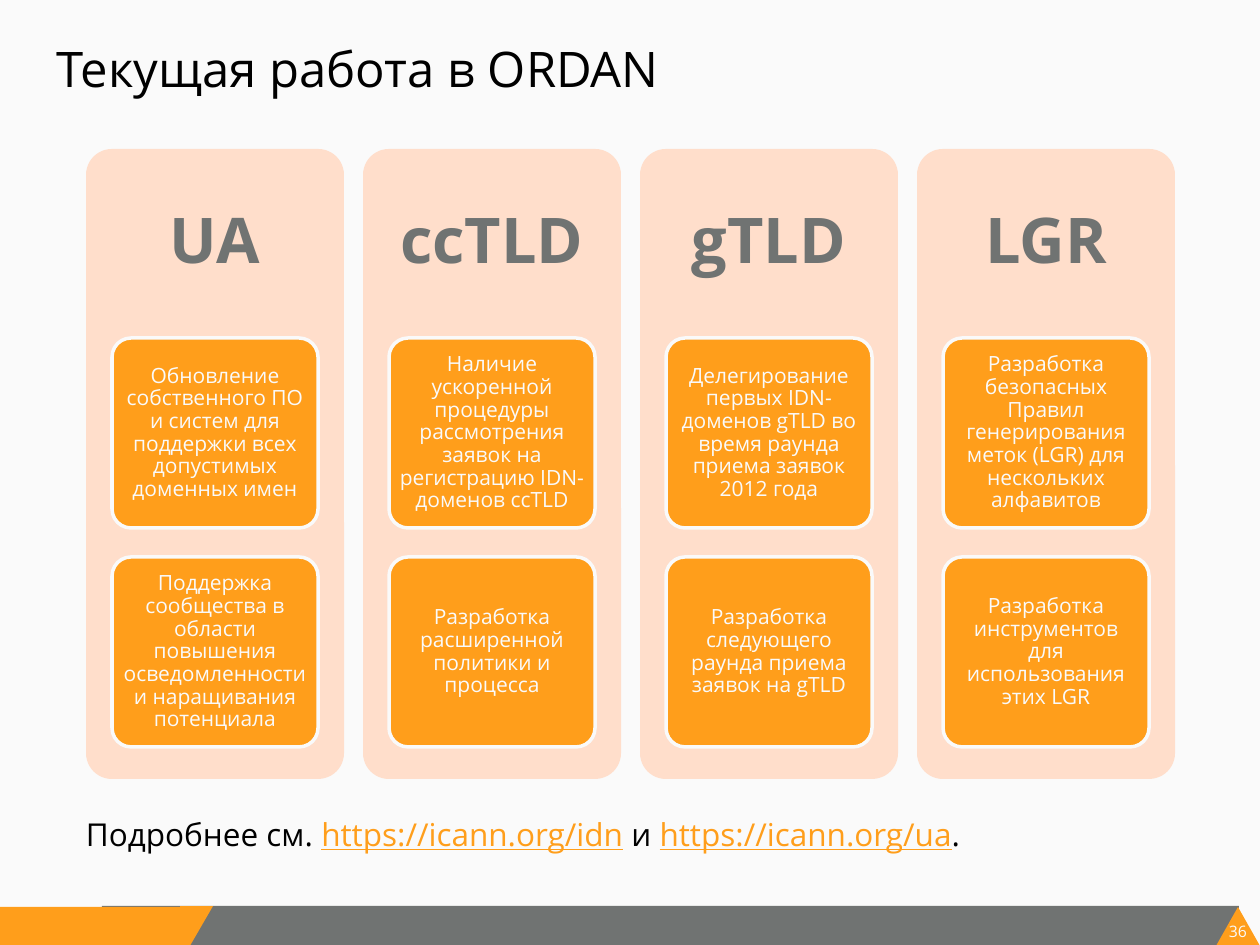
import pptx
import pptx.util
import pptx.dml.color
import pptx.enum.shapes
import pptx.enum.text

PX = 914400 / 126
FONT = "Open Sans"
PAPER, BLACK, GREY, ORANGE, PEACH = "FAFAFA", "000000", "707372", "FF9E1B", "FFDECB"
SHAPE = pptx.enum.shapes.MSO_SHAPE
ALIGN = pptx.enum.text.PP_ALIGN
ANCHOR = pptx.enum.text.MSO_ANCHOR

TITLE = "Текущая работа в ORDAN"
COLUMNS = [
    ("UA", [
        "Обновление собственного ПО и систем для поддержки всех допустимых доменных имен",
        "Поддержка сообщества в области повышения осведомленности и наращивания потенциала",
    ]),
    ("ccTLD", [
        "Наличие ускоренной процедуры рассмотрения заявок на регистрацию IDN-доменов ccTLD",
        "Разработка расширенной политики и процесса",
    ]),
    ("gTLD", [
        "Делегирование первых IDN-доменов gTLD во время раунда приема заявок 2012 года",
        "Разработка следующего раунда приема заявок на gTLD",
    ]),
    ("LGR", [
        "Разработка безопасных Правил генерирования меток (LGR) для нескольких алфавитов",
        "Разработка инструментов для использования этих LGR",
    ]),
]
MORE = [
    ("Подробнее см. ", BLACK, False),
    ("https://icann.org/idn", ORANGE, True),
    (" и ", BLACK, False),
    ("https://icann.org/ua", ORANGE, True),
    (".", BLACK, False),
]
PAGE_NUMBER = "36"

FOOTER = [
    (SHAPE.RECTANGLE, (102, 906, 1137, 39), GREY),
    (SHAPE.RECTANGLE, (0, 907, 189, 39), ORANGE),
    (SHAPE.ISOSCELES_TRIANGLE, (1216, 907, 44, 39), ORANGE),
    (SHAPE.PARALLELOGRAM, (169, 906, 44, 39), ORANGE),
    (SHAPE.RECTANGLE, (180, 906, 18, 16), ORANGE),
]
COLUMN_LEFT, COLUMN_TOP, COLUMN_WIDTH, COLUMN_HEIGHT, COLUMN_STEP = 86, 149, 258, 630, 277
HEADING_HEIGHT = 189
CARD_INSET, CARD_TOP, CARD_WIDTH, CARD_HEIGHT, CARD_STEP = 26, 338, 206, 190, 219


def px(value):
    return round(value * PX)


def color(code):
    return pptx.dml.color.RGBColor.from_string(code)


def add_block(page, kind, place, fill, line=None):
    block = page.shapes.add_shape(kind, *map(px, place))
    block.shadow.inherit = False
    block.fill.solid()
    block.fill.fore_color.rgb = color(fill)
    if line:
        block.line.color.rgb = color(line)
        block.line.width = pptx.util.Pt(2)
    else:
        block.line.fill.background()
    if kind == SHAPE.ROUNDED_RECTANGLE:
        block.adjustments[0] = 0.1
    return block


def write(box, spans, size, insets, align=ALIGN.LEFT, anchor=ANCHOR.TOP, spacing=None, bold=False):
    frame = box.text_frame
    frame.word_wrap = True
    frame.vertical_anchor = anchor
    frame.margin_left = frame.margin_right = px(insets[0])
    frame.margin_top = frame.margin_bottom = px(insets[1])
    para = frame.paragraphs[0]
    para.alignment = align
    if spacing:
        para.line_spacing = spacing
    for text, ink, underline in spans:
        span = para.add_run()
        span.text = text
        span.font.name = FONT
        span.font.size = pptx.util.Pt(size)
        span.font.bold = bold
        span.font.underline = underline
        span.font.color.rgb = color(ink)


def add_text(page, place, *args, **style):
    write(page.shapes.add_textbox(*map(px, place)), *args, **style)


def main():
    deck = pptx.Presentation()
    deck.slide_width, deck.slide_height = px(1260), px(945)
    page = deck.slides.add_slide(deck.slide_layouts[6])
    page.background.fill.solid()
    page.background.fill.fore_color.rgb = color(PAPER)

    for kind, place, fill in FOOTER:
        block = add_block(page, kind, place, fill)
        if kind == SHAPE.PARALLELOGRAM:
            block.adjustments[0] = 0.58
            block.rotation = 180
    add_text(page, (1227, 922, 22, 19), [(PAGE_NUMBER, PAPER, False)], 9, (0, 0), align=ALIGN.CENTER)
    add_text(page, (44, 32, 1216, 158), [(TITLE, BLACK, False)], 28, (13, 6))

    centred = {"align": ALIGN.CENTER, "anchor": ANCHOR.MIDDLE, "spacing": 0.9}
    for column, (heading, cards) in enumerate(COLUMNS):
        left = COLUMN_LEFT + column * COLUMN_STEP
        add_block(page, SHAPE.ROUNDED_RECTANGLE, (left, COLUMN_TOP, COLUMN_WIDTH, COLUMN_HEIGHT), PEACH)
        add_text(page, (left, COLUMN_TOP, COLUMN_WIDTH, HEADING_HEIGHT),
                 [(heading, GREY, False)], 36, (19, 19), bold=True, **centred)
        for row, text in enumerate(cards):
            place = (left + CARD_INSET, CARD_TOP + row * CARD_STEP, CARD_WIDTH, CARD_HEIGHT)
            card = add_block(page, SHAPE.ROUNDED_RECTANGLE, place, ORANGE, PAPER)
            write(card, [(text, PAPER, False)], 12, (5, 4), **centred)

    add_text(page, (86, 815, 1057, 64), MORE, 18, (0, 0))
    deck.save("out.pptx")


if __name__ == "__main__":
    main()
